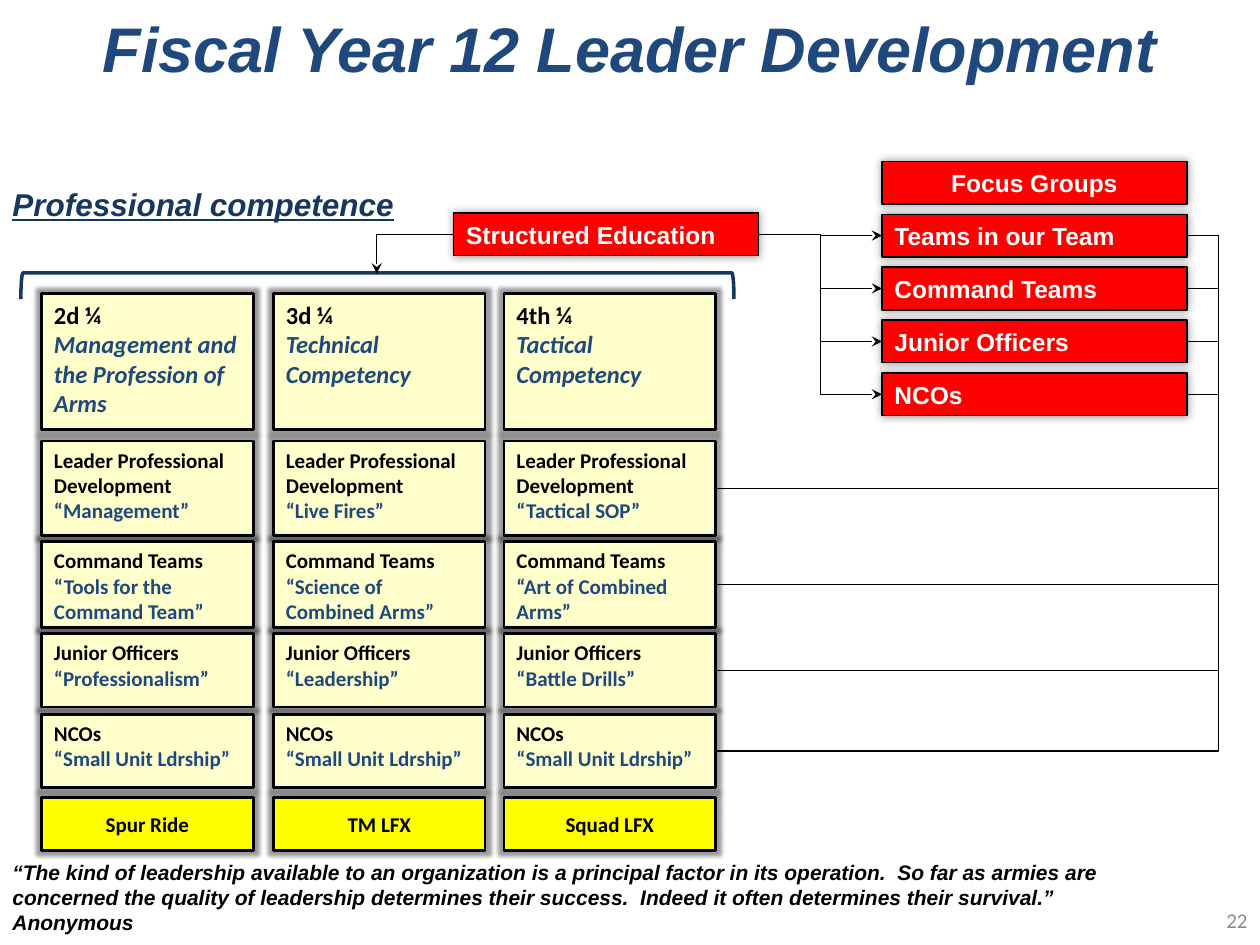
"""Build the leader development slide."""
from lxml import etree
from pptx import Presentation
from pptx.dml.color import RGBColor
from pptx.enum.shapes import MSO_CONNECTOR, MSO_SHAPE
from pptx.enum.text import MSO_ANCHOR, PP_ALIGN
from pptx.oxml.ns import qn
from pptx.util import Inches, Pt

RECTANGLE = MSO_SHAPE.RECTANGLE
PROCESS = MSO_SHAPE.FLOWCHART_PROCESS
PENTAGON = MSO_SHAPE.PENTAGON
OCTAGON = MSO_SHAPE.OCTAGON
BRACKET = MSO_SHAPE.LEFT_BRACKET
ELBOW = MSO_CONNECTOR.ELBOW
TOP, MIDDLE = MSO_ANCHOR.TOP, MSO_ANCHOR.MIDDLE
LEFT, CENTER, RIGHT = PP_ALIGN.LEFT, PP_ALIGN.CENTER, PP_ALIGN.RIGHT
LEFT_SIDE, RIGHT_SIDE = 1, 3

BLACK, WHITE, RED = "000000", "FFFFFF", "FF0000"
BLUE, NAVY, GRAY = "1F497D", "17375E", "8C8C8C"
CREAM, YELLOW = "FFFFCC", "FFFF00"

COLUMN_LEFTS = (0.33, 2.17, 4.0)
COLUMN_WIDTH = 1.68
QUARTERS = (
    ("2d ¼", "Management and the Profession of Arms"),
    ("3d ¼", "Technical Competency"),
    ("4th ¼", "Tactical Competency"),
)
TRAINING_ROWS = (
    (3.5, 0.75, "Leader Professional Development",
     ("“Management”", "“Live Fires”", "“Tactical SOP”")),
    (4.3, 0.68, "Command Teams",
     ("“Tools for the Command Team”", "“Science of Combined Arms”",
      "“Art of Combined Arms”")),
    (5.03, 0.58, "Junior Officers",
     ("“Professionalism”", "“Leadership”", "“Battle Drills”")),
    (5.67, 0.58, "NCOs", ("“Small Unit Ldrship”",) * 3),
)
EVENTS = ("Spur Ride", "TM LFX", "Squad LFX")
FOCUS_TEAMS = ("Teams in our Team", "Command Teams", "Junior Officers", "NCOs")
QUOTE = (
    "“The kind of leadership available to an organization is a principal "
    "factor in its operation.  So far as armies are concerned the quality of "
    "leadership determines their success.  Indeed it often determines their "
    "survival.”  Anonymous"
)


def rgb(color):
    """Turn a hex string into a colour."""
    return RGBColor.from_string(color)


def style_paragraph(para, font, size, color, align=LEFT, bold=True, italic=False):
    """Format a paragraph and its runs."""
    para.alignment = align
    for span in para.runs:
        span.font.name = font
        span.font.size = Pt(size)
        span.font.bold = bold
        span.font.italic = italic
        span.font.color.rgb = rgb(color)


def add_effect(shape, name, radius_name):
    """Give a shape a soft black edge of 5 points."""
    shape.shadow.inherit = False
    effects = shape._element.spPr.find(qn("a:effectLst"))
    effect = etree.SubElement(effects, qn(name), {radius_name: str(Pt(5))})
    color = etree.SubElement(effect, qn("a:srgbClr"), val=BLACK)
    etree.SubElement(color, qn("a:alpha"), val="40000")


def add_box(slide, kind, frame, fill, width, lines, anchor=TOP):
    """Add a filled, outlined shape holding one paragraph per line."""
    box = slide.shapes.add_shape(kind, *map(Inches, frame))
    box.fill.solid()
    box.fill.fore_color.rgb = rgb(fill)
    box.line.color.rgb = rgb(BLACK)
    box.line.width = Pt(width)
    box.text_frame.text = "\n".join(lines)
    box.text_frame.vertical_anchor = anchor
    return box


def add_red_box(slide, left, top, text, align=LEFT):
    """Add a red label with a shadow."""
    box = add_box(slide, RECTANGLE, (left, top, 2.42, 0.34), RED, 0.75, [text], MIDDLE)
    add_effect(box, "a:outerShdw", "blurRad")
    style_paragraph(box.text_frame.paragraphs[0], "Arial", 14, WHITE, align)
    return box


def add_topic_box(slide, kind, frame, heading, topic, size, italic=False):
    """Add a cream box with a black heading and a blue topic."""
    box = add_box(slide, kind, frame, CREAM, 1.5, [heading, topic])
    add_effect(box, "a:glow", "rad")
    first, second = box.text_frame.paragraphs
    style_paragraph(first, "Calibri", size, BLACK)
    style_paragraph(second, "Calibri", size, BLUE, italic=italic)
    return box


def add_event_box(slide, left, text):
    """Add a yellow box for the closing event of a quarter."""
    frame = (left, 6.33, COLUMN_WIDTH, 0.42)
    box = add_box(slide, OCTAGON, frame, YELLOW, 1.5, [text], MIDDLE)
    box.adjustments[0] = 0
    add_effect(box, "a:glow", "rad")
    style_paragraph(box.text_frame.paragraphs[0], "Calibri", 12, BLACK, CENTER)


def add_text(slide, frame, text, font, size, color, wrap=True, anchor=TOP, **style):
    """Add a text box with one paragraph."""
    box = slide.shapes.add_textbox(*map(Inches, frame))
    box.text_frame.word_wrap = wrap
    box.text_frame.vertical_anchor = anchor
    box.text_frame.text = text
    para = box.text_frame.paragraphs[0]
    style_paragraph(para, font, size, color, **style)
    return para


def add_elbow(slide, start, end, arrow=False):
    """Add a thin black elbow connector between two points."""
    elbow = slide.shapes.add_connector(ELBOW, *map(Inches, start + end))
    elbow.line.color.rgb = rgb(BLACK)
    elbow.line.width = Pt(0.75)
    properties = elbow._element.spPr
    if arrow:
        etree.SubElement(properties.find(qn("a:ln")), qn("a:tailEnd"), type="stealth")
    etree.SubElement(properties, qn("a:effectLst"))
    return elbow


def join_boxes(slide, source, target, target_side, bend=0.5, arrow=False):
    """Join the right side of a box to a side of another box."""
    elbow = add_elbow(slide, (0, 0), (1, 1), arrow)
    elbow.begin_connect(source, RIGHT_SIDE)
    elbow.end_connect(target, target_side)
    guides = elbow._element.spPr.find(qn("a:prstGeom")).find(qn("a:avLst"))
    formula = f"val {round(bend * 100000)}"
    etree.SubElement(guides, qn("a:gd"), name="adj1", fmla=formula)


def add_bracket(slide):
    """Add the bracket over the quarters and the arrow pointing to it."""
    bracket = slide.shapes.add_shape(BRACKET, *map(Inches, (2.89, -0.56, 0.21, 5.66)))
    bracket.rotation = 90
    bracket.fill.background()
    bracket.line.color.rgb = rgb(NAVY)
    bracket.line.width = Pt(2)
    bracket.shadow.inherit = False


def add_title(slide):
    """Place and format the title."""
    title = slide.shapes.title
    title.left, title.top, title.width, title.height = map(Inches, (0.5, 0, 9, 0.75))
    title.text_frame.text = "Fiscal Year 12 Leader Development"
    title.text_frame.vertical_anchor = MIDDLE
    style_paragraph(title.text_frame.paragraphs[0], "Arial", 36, BLUE, CENTER, italic=True)


def main():
    """Build and save the slide."""
    deck = Presentation()
    deck.slide_width, deck.slide_height = Inches(10), Inches(7.5)
    slide = deck.slides.add_slide(deck.slide_layouts[5])
    add_title(slide)

    for left, quarter, event in zip(COLUMN_LEFTS, QUARTERS, EVENTS):
        frame = (left, 2.33, COLUMN_WIDTH, 1.08)
        box = add_topic_box(slide, PENTAGON, frame, *quarter, 14, italic=True)
        box.adjustments[0] = 0
        add_event_box(slide, left, event)
    last_column = []
    for top, height, heading, topics in TRAINING_ROWS:
        for left, topic in zip(COLUMN_LEFTS, topics):
            frame = (left, top, COLUMN_WIDTH, height)
            box = add_topic_box(slide, PROCESS, frame, heading, topic, 12)
        last_column.append(box)

    education = add_red_box(slide, 3.6, 1.69, "Structured Education")
    add_red_box(slide, 7, 1.28, "Focus Groups", CENTER)
    for row, (team, training) in enumerate(zip(FOCUS_TEAMS, last_column)):
        box = add_red_box(slide, 7, 1.7 + 0.42 * row, team)
        join_boxes(slide, education, box, LEFT_SIDE, arrow=True)
        join_boxes(slide, box, training, RIGHT_SIDE, bend=-0.25 / 3.74)

    add_bracket(slide)
    arrow = add_elbow(slide, (3.6, 1.86), (2.99, 2.17), arrow=True)
    arrow.begin_connect(education, LEFT_SIDE)
    arrow._element.spPr.find(qn("a:prstGeom")).set("prst", "bentConnector2")

    heading = add_text(slide, (0, 1.42, 3.26, 0.4), "Professional competence",
                       "Arial", 18, NAVY, wrap=False, italic=True)
    heading.runs[0].font.underline = True
    add_text(slide, (0, 6.77, 8.92, 0.71), QUOTE, "Arial", 12, BLACK, italic=True)
    add_text(slide, (7.67, 7.1, 2.33, 0.4), "22", "Calibri", 12, GRAY,
             anchor=MIDDLE, align=RIGHT, bold=False)
    deck.save("out.pptx")


if __name__ == "__main__":
    main()
